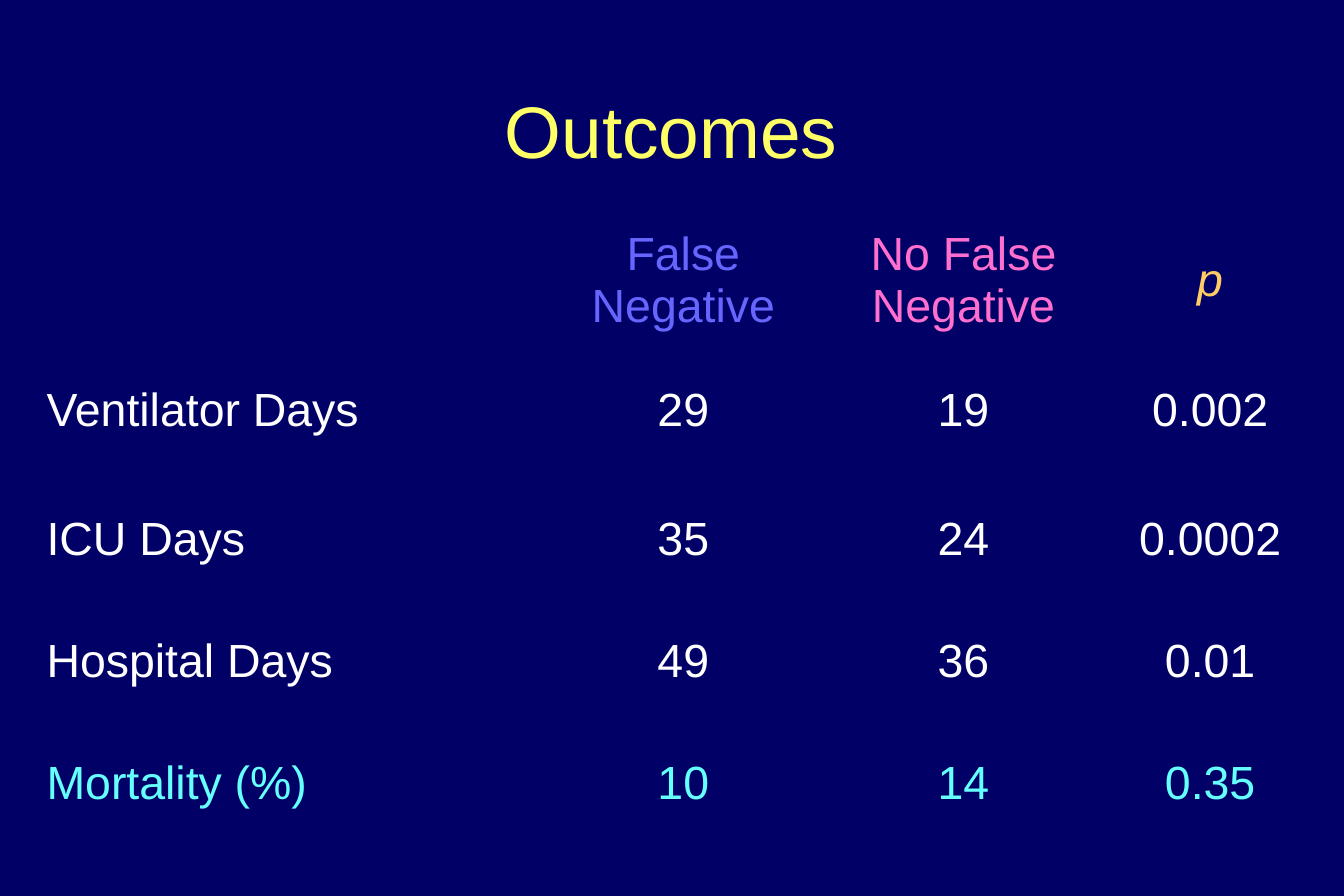
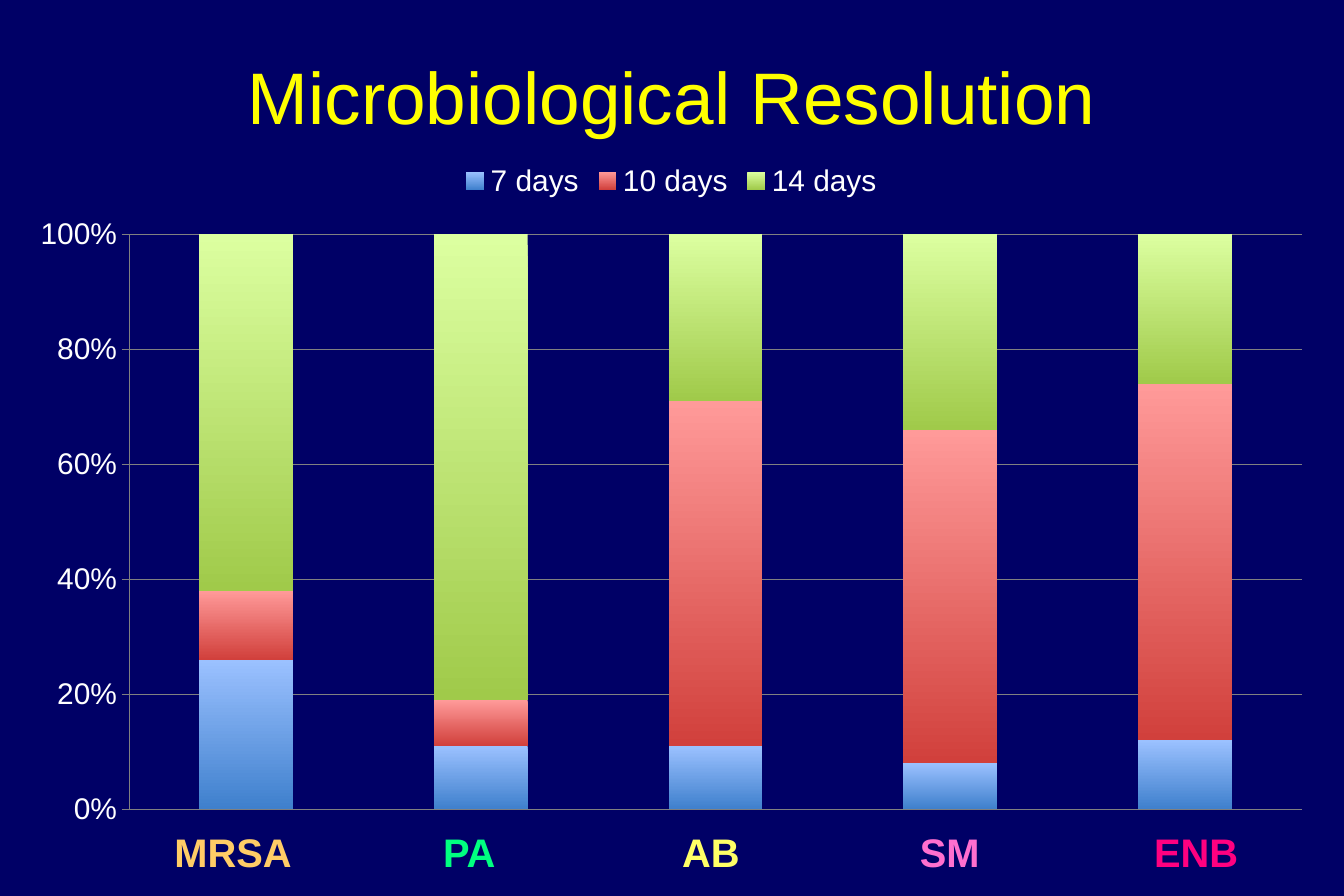
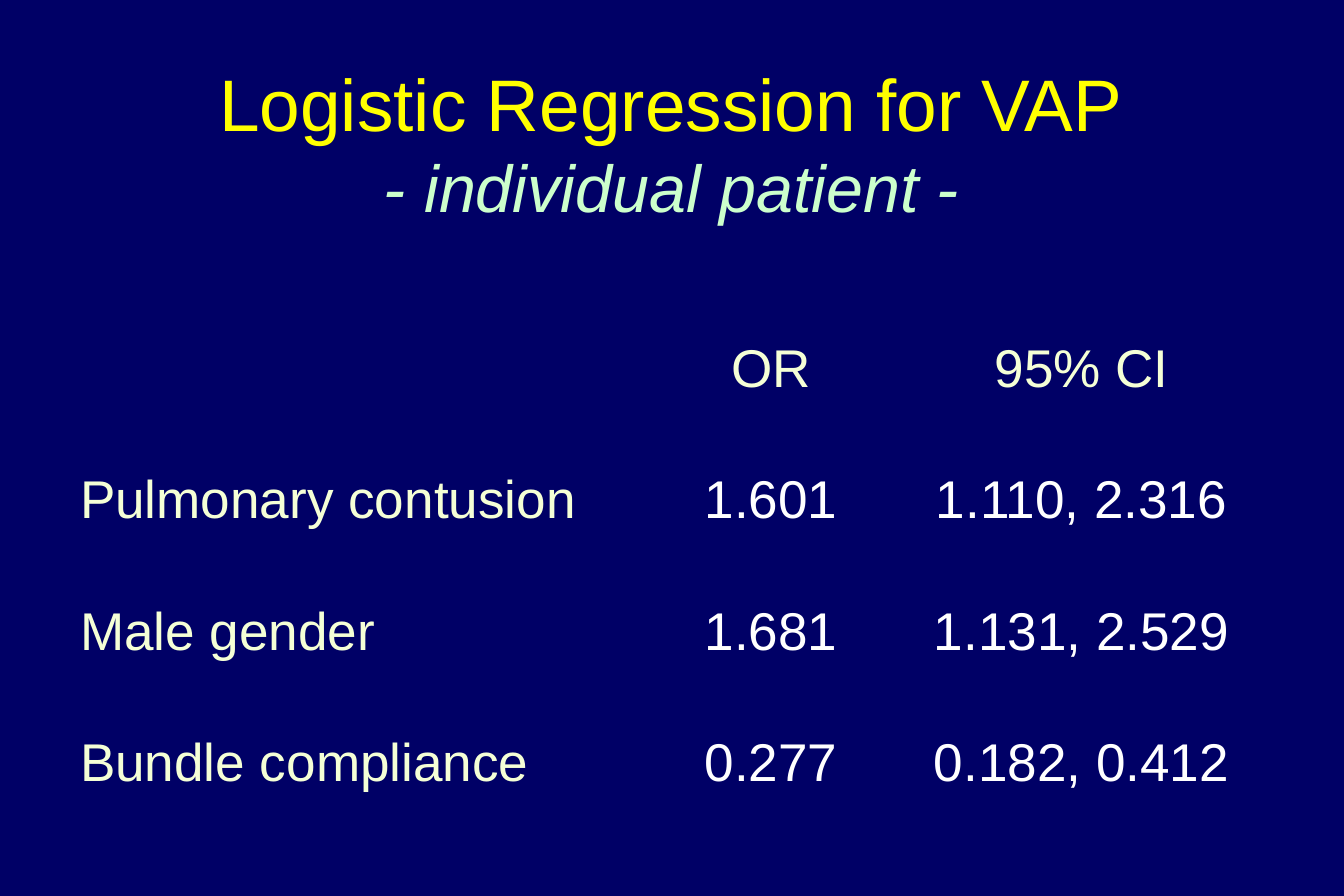
from dataclasses import dataclass

from pptx import Presentation
from pptx.chart.data import CategoryChartData
from pptx.dml.color import RGBColor
from pptx.enum.chart import XL_CHART_TYPE, XL_LEGEND_POSITION, XL_TICK_MARK
from pptx.enum.text import MSO_ANCHOR, MSO_AUTO_SIZE, PP_ALIGN
from pptx.oxml.ns import qn
from pptx.slide import Slide
from pptx.text.text import Font
from pptx.util import Inches, Pt

# Shared style
FONT = "Arial"
NAVY = RGBColor(0x00, 0x00, 0x66)
WHITE = RGBColor(0xFF, 0xFF, 0xFF)
YELLOW = RGBColor(0xFF, 0xFF, 0x00)
SOFT_YELLOW = RGBColor(0xFF, 0xFF, 0x66)
VIOLET = RGBColor(0x66, 0x66, 0xFF)
PINK = RGBColor(0xFF, 0x6F, 0xCF)
ORANGE = RGBColor(0xFF, 0xCC, 0x66)
CYAN = RGBColor(0x66, 0xFF, 0xFF)
GREEN = RGBColor(0x00, 0xFF, 0x80)
MAGENTA = RGBColor(0xFF, 0x00, 0x80)
MINT = RGBColor(0xCC, 0xFF, 0xCC)
CREAM = RGBColor(0xF5, 0xFF, 0xD6)
GRAY = RGBColor(0x80, 0x80, 0x80)

LEFT, CENTER = PP_ALIGN.LEFT, PP_ALIGN.CENTER
TOP, MIDDLE = MSO_ANCHOR.TOP, MSO_ANCHOR.MIDDLE
FIT_SHAPE = MSO_AUTO_SIZE.SHAPE_TO_FIT_TEXT
STACKED_100 = XL_CHART_TYPE.COLUMN_STACKED_100
LEGEND_TOP = XL_LEGEND_POSITION.TOP
TICK_CROSS = XL_TICK_MARK.CROSS
PLAIN_TABLE_STYLE = "{2D5ABB26-0587-4C30-8999-92F81FD0307C}"


@dataclass(frozen=True)
class Area:
    left: float
    top: float
    width: float
    height: float

    def lengths(self) -> tuple[Inches, ...]:
        return tuple(Inches(n) for n in (self.left, self.top, self.width, self.height))


@dataclass(frozen=True)
class Line:
    text: str
    color: RGBColor
    size: float = 44
    italic: bool = False


@dataclass(frozen=True)
class Cell:
    text: str
    color: RGBColor = WHITE
    italic: bool = False


@dataclass(frozen=True)
class Series:
    name: str
    values: tuple[int, ...]
    top_color: RGBColor
    bottom_color: RGBColor


@dataclass(frozen=True)
class BarLabel:
    text: str
    left: float
    width: float
    color: RGBColor


OUTCOMES = [
    [Cell(""), Cell("False Negative", VIOLET), Cell("No False Negative", PINK),
     Cell("p", ORANGE, italic=True)],
    *([Cell(text, color) for text in texts] for color, texts in (
        (WHITE, ("Ventilator Days", "29", "19", "0.002")),
        (WHITE, ("ICU Days", "35", "24", "0.0002")),
        (WHITE, ("Hospital Days", "49", "36", "0.01")),
        (CYAN, ("Mortality (%)", "10", "14", "0.35")),
    )),
]

REGRESSION = [
    [Cell(""), Cell("OR", CREAM), Cell("95% CI", CREAM)],
    *([Cell(factor, CREAM), Cell(ratio), Cell(interval)] for factor, ratio, interval in (
        ("Pulmonary contusion", "1.601", "1.110, 2.316"),
        ("Male gender", "1.681", "1.131, 2.529"),
        ("Bundle compliance", "0.277", "0.182, 0.412"),
    )),
]

RESOLUTION = [
    Series("7 days", (26, 11, 11, 8, 12),
           RGBColor(0x9B, 0xC1, 0xFF), RGBColor(0x3F, 0x80, 0xCD)),
    Series("10 days", (12, 8, 60, 58, 62),
           RGBColor(0xFF, 0x9A, 0x99), RGBColor(0xD1, 0x40, 0x3C)),
    Series("14 days", (62, 81, 29, 34, 26),
           RGBColor(0xDC, 0xFF, 0xA0), RGBColor(0xA0, 0xCA, 0x4A)),
]

BAR_LABELS = [
    BarLabel("MRSA", 1.46, 0.99, ORANGE),
    BarLabel("PA", 3.71, 0.44, GREEN),
    BarLabel("AB", 5.71, 0.49, SOFT_YELLOW),
    BarLabel("SM", 7.7, 0.51, PINK),
    BarLabel("ENB", 9.66, 0.71, MAGENTA),
]


def style_font(font: Font, size: float, color: RGBColor,
               bold: bool = False, italic: bool = False) -> None:
    font.name = FONT
    font.size = Pt(size)
    font.color.rgb = color
    font.bold = bold
    font.italic = italic


def add_title(page: Slide, area: Area, lines: list[Line],
              anchor: MSO_ANCHOR = MIDDLE) -> None:
    frame = page.shapes.add_textbox(*area.lengths()).text_frame
    frame.word_wrap = True
    frame.vertical_anchor = anchor
    for index, line in enumerate(lines):
        para = frame.add_paragraph() if index else frame.paragraphs[0]
        para.text = line.text
        para.alignment = CENTER
        style_font(para.font, line.size, line.color, italic=line.italic)


def add_plain_table(page: Slide, area: Area, rows: list[list[Cell]],
                    widths: list[float], heights: list[float], size: float) -> None:
    table = page.shapes.add_table(len(rows), len(widths), *area.lengths()).table
    table.first_row = table.horz_banding = False
    table._tbl.tblPr.find(qn("a:tableStyleId")).text = PLAIN_TABLE_STYLE
    for column, width in zip(table.columns, widths):
        column.width = Inches(width)
    for table_row, height in zip(table.rows, heights):
        table_row.height = Inches(height)
    for row_index, row in enumerate(rows):
        for column_index, content in enumerate(row):
            cell = table.cell(row_index, column_index)
            cell.fill.background()
            cell.vertical_anchor = MIDDLE
            cell.margin_left = cell.margin_right = Inches(0.11)
            para = cell.text_frame.paragraphs[0]
            para.text = content.text
            para.alignment = CENTER if column_index else LEFT
            style_font(para.font, size, content.color, italic=content.italic)


def add_resolution_chart(page: Slide, area: Area) -> None:
    data = CategoryChartData()
    data.categories = [str(n + 1) for n in range(len(BAR_LABELS))]
    for series in RESOLUTION:
        data.add_series(series.name, series.values)
    chart = page.shapes.add_chart(STACKED_100, *area.lengths(), data).chart
    style_font(chart.font, 18, WHITE)
    chart.has_title = False
    chart.has_legend = True
    chart.legend.position = LEGEND_TOP
    chart.legend.include_in_layout = False

    # Axes
    chart.category_axis.visible = False
    axis = chart.value_axis
    axis.major_unit = 0.2
    axis.major_tick_mark = TICK_CROSS
    axis.tick_labels.number_format = "0%"
    axis.tick_labels.number_format_is_linked = False
    for line in (axis.format.line, axis.major_gridlines.format.line):
        line.color.rgb = GRAY
        line.width = Pt(0.25)

    # Bars
    plot = chart.plots[0]
    plot.vary_by_categories = False
    plot.gap_width = 150
    plot.overlap = 100
    for bars, series in zip(plot.series, RESOLUTION):
        fill = bars.format.fill
        fill.gradient()
        fill.gradient_angle = 270
        for stop, color in zip(fill.gradient_stops, (series.top_color, series.bottom_color)):
            stop.color.rgb = color


def add_bar_label(page: Slide, label: BarLabel) -> None:
    area = Area(label.left, 6.93, label.width, 0.4)
    frame = page.shapes.add_textbox(*area.lengths()).text_frame
    frame.margin_left = frame.margin_top = frame.margin_right = frame.margin_bottom = 0
    frame.word_wrap = False
    frame.auto_size = FIT_SHAPE
    para = frame.paragraphs[0]
    para.text = label.text
    style_font(para.font, 24, label.color, bold=True)


def main() -> None:
    deck = Presentation()
    deck.slide_width, deck.slide_height = Inches(11.25), Inches(7.5)
    background = deck.slide_master.background.fill
    background.solid()
    background.fore_color.rgb = NAVY
    blank = deck.slide_layouts[6]

    # Outcomes
    page = deck.slides.add_slide(blank)
    add_title(page, Area(0.84, 0.67, 9.56, 1.25), [Line("Outcomes", SOFT_YELLOW)], TOP)
    add_plain_table(page, Area(0.28, 1.83, 10.78, 5.23), OUTCOMES,
                    [4.22, 2.44, 2.25, 1.88], [1.03, 1.14, 1.02, 1.02, 1.02], 28)

    # Microbiological resolution
    page = deck.slides.add_slide(blank)
    add_title(page, Area(0, 0.17, 11.25, 1.25), [Line("Microbiological Resolution", YELLOW)])
    add_resolution_chart(page, Area(0.12, 1.25, 11, 5.78))
    for label in BAR_LABELS:
        add_bar_label(page, label)

    # Logistic regression
    page = deck.slides.add_slide(blank)
    add_title(page, Area(0.56, 0.3, 10.12, 1.78),
              [Line("Logistic Regression for VAP", YELLOW),
               Line("- individual patient -", MINT, 40, italic=True)])
    add_plain_table(page, Area(0.56, 2.54, 10.13, 4.41), REGRESSION,
                    [4.92, 1.95, 3.25], [1.1] * len(REGRESSION), 32)

    deck.save("out.pptx")


if __name__ == "__main__":
    main()
